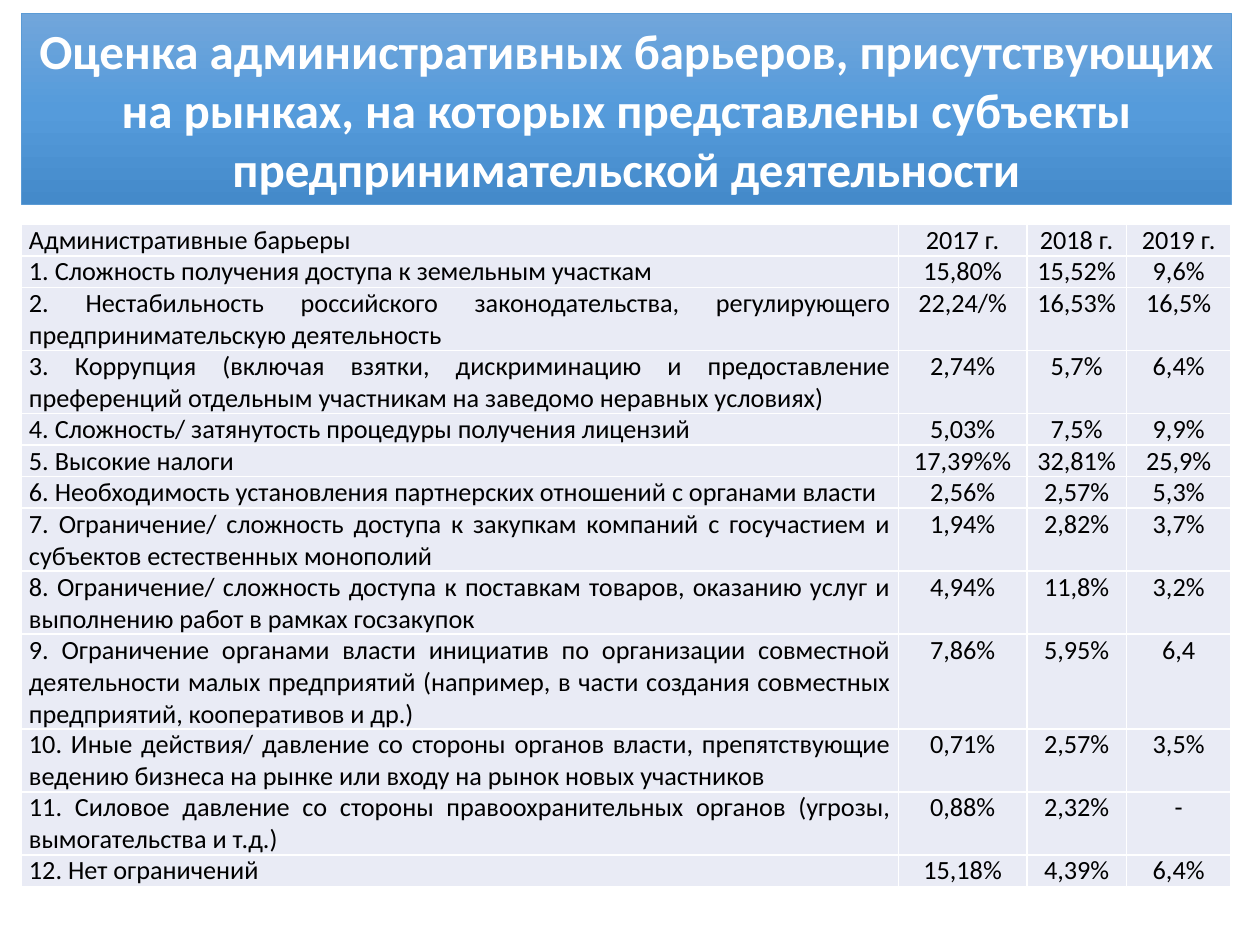
import copy

import pptx
import pptx.dml.color
import pptx.enum.text
import pptx.oxml
import pptx.oxml.ns
import pptx.util

COLORS = {
    "text": "000000",
    "title": "FFFFFF",
    "border": "FFFFFF",
    "cell": "E9EBF5",
    "line": "5B9BD5",
    "top": "71A6DB",
    "middle": "559BDB",
    "bottom": "448ACA",
}
ALIGN = pptx.enum.text.PP_ALIGN
TITLE = (
    "Оценка административных барьеров, присутствующих на рынках, "
    "на которых представлены субъекты предпринимательской деятельности"
)
COLUMN_WIDTHS = [6.96, 1.02, 0.79, 0.83]
BARRIERS = [
    (1, "Административные барьеры", "2017 г.", "2018 г.", "2019 г."),
    (1, "1. Сложность получения доступа к земельным участкам", "15,80%", "15,52%", "9,6%"),
    (2, "2. Нестабильность российского законодательства, регулирующего "
        "предпринимательскую деятельность", "22,24/%", "16,53%", "16,5%"),
    (2, "3. Коррупция (включая взятки, дискриминацию и предоставление преференций "
        "отдельным участникам на заведомо неравных условиях)", "2,74%", "5,7%", "6,4%"),
    (1, "4. Сложность/ затянутость процедуры получения лицензий", "5,03%", "7,5%", "9,9%"),
    (1, "5. Высокие налоги", "17,39%%", "32,81%", "25,9%"),
    (1, "6. Необходимость установления партнерских отношений с органами власти",
     "2,56%", "2,57%", "5,3%"),
    (2, "7. Ограничение/ сложность доступа к закупкам компаний с госучастием и "
        "субъектов естественных монополий", "1,94%", "2,82%", "3,7%"),
    (2, "8. Ограничение/ сложность доступа к поставкам товаров, оказанию услуг и "
        "выполнению работ в рамках госзакупок", "4,94%", "11,8%", "3,2%"),
    (3, "9. Ограничение органами власти инициатив по организации совместной "
        "деятельности малых предприятий (например, в части создания совместных "
        "предприятий, кооперативов и др.)", "7,86%", "5,95%", "6,4"),
    (2, "10. Иные действия/ давление со стороны органов власти, препятствующие "
        "ведению бизнеса на рынке или входу на рынок новых участников",
     "0,71%", "2,57%", "3,5%"),
    (2, "11. Силовое давление со стороны правоохранительных органов (угрозы, "
        "вымогательства и т.д.)", "0,88%", "2,32%", "-"),
    (1, "12. Нет ограничений", "15,18%", "4,39%", "6,4%"),
]


def rgb(name):
    return pptx.dml.color.RGBColor.from_string(COLORS[name])


def write(tf, text, size=15, color="text", bold=False, align=ALIGN.CENTER, after=0, font="Calibri"):
    p = tf.paragraphs[0]
    p.alignment = align
    p.space_after = pptx.util.Pt(after)
    r = p.add_run()
    r.text = text
    r.font.name = font
    r.font.size = pptx.util.Pt(size)
    r.font.bold = bold
    r.font.color.rgb = rgb(color)


class Deck:
    def __init__(self, width, height):
        self.prs = pptx.Presentation()
        self.prs.slide_width = pptx.util.Inches(width)
        self.prs.slide_height = pptx.util.Inches(height)
        self.slide = None

    def add_slide(self):
        self.slide = self.prs.slides.add_slide(self.prs.slide_layouts[5])

    def x(self, share):
        return int(self.prs.slide_width * share)

    def y(self, share):
        return int(self.prs.slide_height * share)

    def title(self, text, left, top, width, height):
        sp = self.slide.shapes.title
        sp.left, sp.top = self.x(left), self.y(top)
        sp.width, sp.height = self.x(width), self.y(height)
        self.gradient(sp, ["top", "middle", "bottom"])
        sp.line.color.rgb = rgb("line")
        sp.line.width = pptx.util.Pt(0.5)
        tf = sp.text_frame
        tf.word_wrap = True
        tf.auto_size = pptx.enum.text.MSO_AUTO_SIZE.SHAPE_TO_FIT_TEXT
        tf.vertical_anchor = pptx.enum.text.MSO_ANCHOR.MIDDLE
        write(tf, text, size=28, color="title", bold=True)

    def gradient(self, sp, names):
        sp.fill.gradient()
        sp.fill.gradient_angle = 270
        stops = sp._element.spPr.find(".//" + pptx.oxml.ns.qn("a:gsLst"))
        stops.append(copy.deepcopy(stops[0]))
        for i, (stop, name) in enumerate(zip(sp.fill.gradient_stops, names)):
            stop.position = i / (len(names) - 1)
            stop.color.rgb = rgb(name)

    def table(self, rows, widths, left, top, width, height):
        frame = self.slide.shapes.add_table(
            len(rows), len(widths), self.x(left), self.y(top), self.x(width), self.y(height)
        )
        table = frame.table
        table.first_row = table.horz_banding = False
        for column, part in zip(table.columns, widths):
            column.width = int(self.x(width) * part / sum(widths))
        total_lines = sum(row[0] for row in rows)
        for row, (lines, *texts) in zip(table.rows, rows):
            row.height = int(self.y(height) * lines / total_lines)
            for i, (cell, text) in enumerate(zip(row.cells, texts)):
                self.cell(cell, text, ALIGN.CENTER if i else ALIGN.JUSTIFY)

    def cell(self, cell, text, align):
        cell.margin_left = cell.margin_right = pptx.util.Inches(0.06)
        cell.margin_top = cell.margin_bottom = 0
        cell.fill.solid()
        cell.fill.fore_color.rgb = rgb("cell")
        write(cell.text_frame, text, align=align, after=10)
        for i, side in enumerate("LRTB"):
            border = pptx.oxml.parse_xml(
                f'<a:ln{side} {pptx.oxml.ns.nsdecls("a")} w="{pptx.util.Pt(1)}"><a:solidFill>'
                f'<a:srgbClr val="{COLORS["border"]}"/></a:solidFill></a:ln{side}>'
            )
            cell._tc.get_or_add_tcPr().insert(i, border)


def main():
    deck = Deck(10, 7.5)
    deck.add_slide()
    deck.title(TITLE, 0.017, 0.11 / 7.5, 0.96, 1.51 / 7.5)
    deck.table(BARRIERS, COLUMN_WIDTHS, 0.017, 1.78 / 7.5, 0.96, 0.7)
    deck.prs.save("out.pptx")


if __name__ == "__main__":
    main()
